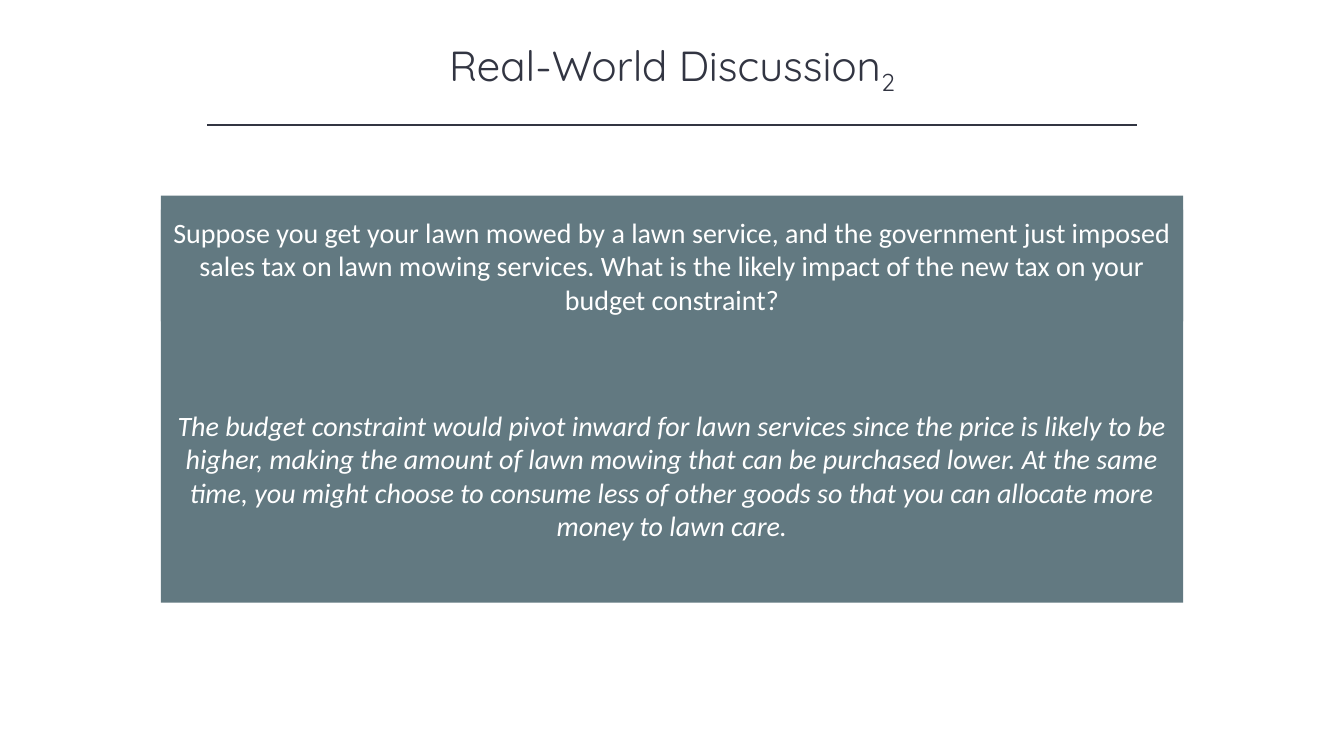
from dataclasses import dataclass

from lxml import etree
from pptx import Presentation
from pptx import util as u
from pptx.dml.color import RGBColor
from pptx.enum import shapes, text
from pptx.oxml.ns import qn


@dataclass(frozen=True)
class Theme:
    """Colours, fonts, type sizes and page size in one place."""
    ink: RGBColor = RGBColor.from_string("323542")
    panel: RGBColor = RGBColor.from_string("627981")
    light: RGBColor = RGBColor.from_string("FFFFFF")
    title_font: str = "Quicksand"
    body_font: str = "Calibri"
    title_size: int = 30
    body_size: int = 20
    page_width: float = 13.33
    page_height: float = 7.5


THEME = Theme()
PANEL_WIDTH = 10.14
QUESTION = (
    "Suppose you get your lawn mowed by a lawn service, and the government just "
    "imposed sales tax on lawn mowing services. What is the likely impact of the "
    "new tax on your budget constraint?"
)
ANSWER = (
    "The budget constraint would pivot inward for lawn services since the price is "
    "likely to be higher, making the amount of lawn mowing that can be purchased "
    "lower. At the same time, you might choose to consume less of other goods so "
    "that you can allocate more money to lawn care."
)


def centred(top, width, height):
    """Return left, top, width and height of an area centred on the page."""
    left = (THEME.page_width - width) / 2
    return [u.Inches(length) for length in (left, top, width, height)]


def add_run(paragraph, words, face, size, colour, italic=None):
    """Append one formatted run and return it."""
    run = paragraph.add_run()
    run.text = words
    run.font.name = face
    run.font.size = u.Pt(size)
    run.font.color.rgb = colour
    run.font.italic = italic
    return run


def centre_text(frame):
    """Wrap and centre a text frame, returning its first paragraph."""
    frame.word_wrap = True
    frame.vertical_anchor = text.MSO_ANCHOR.MIDDLE
    paragraph = frame.paragraphs[0]
    paragraph.alignment = text.PP_ALIGN.CENTER
    return paragraph


def add_heading(slide, words, part):
    """Fill the title placeholder with words and a subscript part number."""
    heading = slide.shapes.title
    heading.left, heading.top, heading.width, heading.height = centred(0.37, 10, 0.61)
    paragraph = centre_text(heading.text_frame)
    style = (THEME.title_font, THEME.title_size, THEME.ink)
    add_run(paragraph, words, *style)
    subscript = add_run(paragraph, part, *style)
    subscript.font._element.set("baseline", "-25000")


def add_rule(slide, top, width):
    """Draw a thin centred line below the heading."""
    left, y, length, _ = centred(top, width, 0)
    rule = slide.shapes.add_connector(
        shapes.MSO_CONNECTOR.STRAIGHT, left, y, left + length, y)
    rule.line.color.rgb = THEME.ink
    rule.line.width = u.Pt(1)
    etree.SubElement(rule._element.spPr, qn("a:effectLst"))


def add_panel(slide, top, width, height, words="", italic=None):
    """Draw a centred filled panel, with text when words are given."""
    panel = slide.shapes.add_shape(
        shapes.MSO_SHAPE.RECTANGLE, *centred(top, width, height))
    panel.shadow.inherit = False
    panel.fill.solid()
    panel.fill.fore_color.rgb = THEME.panel
    panel.line.fill.background()
    if words:
        paragraph = centre_text(panel.text_frame)
        add_run(paragraph, words, THEME.body_font, THEME.body_size, THEME.light, italic)


def main():
    """Build the discussion slide and save it."""
    deck = Presentation()
    deck.slide_width = u.Inches(THEME.page_width)
    deck.slide_height = u.Inches(THEME.page_height)
    slide = deck.slides.add_slide(deck.slide_layouts.get_by_name("Title Only"))
    add_heading(slide, "Real-World Discussion", "2")
    add_rule(slide, 1.24, 9.22)
    add_panel(slide, 1.94, PANEL_WIDTH, 4.04)
    add_panel(slide, 2.08, PANEL_WIDTH, 1.11, QUESTION)
    add_panel(slide, 3.99, 10.07, 1.45, ANSWER, italic=True)
    deck.save("out.pptx")


if __name__ == "__main__":
    main()
